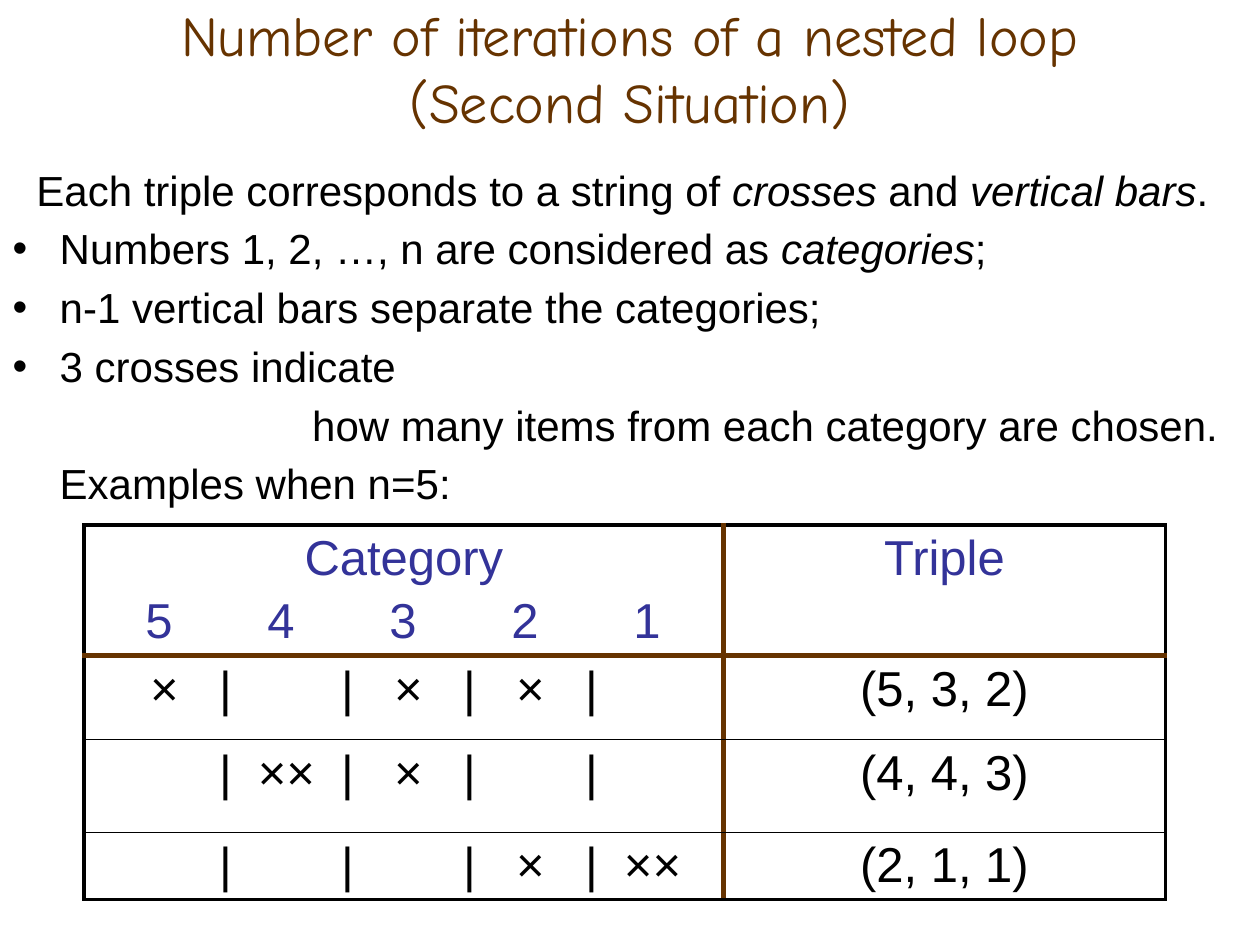
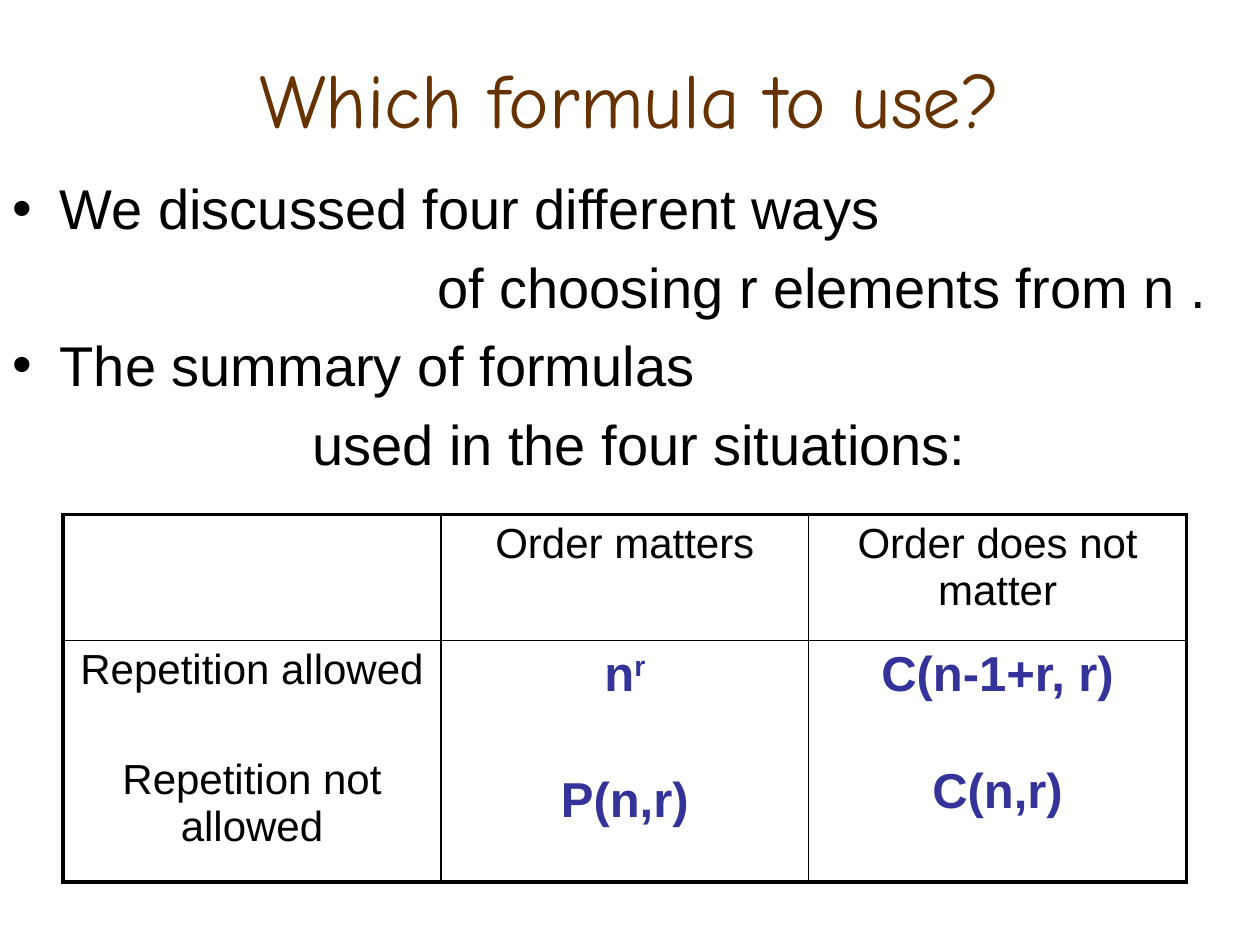
from lxml import etree
from pptx import Presentation
from pptx import util as u
from pptx.dml import color as dml
from pptx.enum import text as t
from pptx.oxml import ns

COLORS = {"brown": "663300", "ink": "000000", "indigo": "333399"}
HEADING, BODY = "Comic Neue", "Arial"
OUTER, INNER, DIVIDER = ("ink", 2.25), ("ink", 1), ("brown", 3)
HANG = 0.95


def rgb(name):
    return dml.RGBColor.from_string(COLORS[name])


def write(paragraph, words, *, size, color="ink", font=BODY, align=None,
          before=None, **style):
    """Add words, a string or a list of strings and (string, style) pairs."""
    paragraph.alignment = align
    if before is not None:
        paragraph.space_before = u.Pt(before)
    for part in [words] if isinstance(words, str) else words:
        content, own = (part, {}) if isinstance(part, str) else part
        look = {**style, **own}
        for number, line in enumerate(content.split("\n")):
            if number:
                paragraph.add_line_break()
            run = paragraph.add_run()
            run.text = line
            run.font.name, run.font.size = font, u.Pt(size)
            run.font.color.rgb = rgb(color)
            run.font.bold = look.get("bold")
            run.font.italic = look.get("italic")
            if "baseline" in look:
                run._r.get_or_add_rPr().set("baseline", str(look["baseline"]))


def add_tabs(paragraph, first, step, count):
    """Set evenly spaced centred tab stops, in centimetres."""
    tabs = etree.SubElement(paragraph._p.get_or_add_pPr(), ns.qn("a:tabLst"))
    for i in range(count):
        etree.SubElement(tabs, ns.qn("a:tab"),
                         pos=str(u.Cm(first + i * step)), algn="ctr")


def set_border(cell, side, color, width):
    line = etree.SubElement(cell._tc.get_or_add_tcPr(), ns.qn(f"a:ln{side}"),
                            w=str(u.Pt(width)))
    fill = etree.SubElement(line, ns.qn("a:solidFill"))
    etree.SubElement(fill, ns.qn("a:srgbClr"), val=COLORS[color])


class Deck:
    def __init__(self):
        self.prs = Presentation()
        self.prs.slide_width, self.prs.slide_height = u.Cm(25.4), u.Cm(19.05)
        self.slide = None

    def new_slide(self):
        self.slide = self.prs.slides.add_slide(self.prs.slide_layouts[1])

    def place(self, index, left, top, width, height):
        holder = self.slide.placeholders[index]
        holder.left, holder.top = u.Cm(left), u.Cm(top)
        holder.width, holder.height = u.Cm(width), u.Cm(height)
        holder.text_frame.auto_size = t.MSO_AUTO_SIZE.NONE
        return holder.text_frame

    def title(self, words, top, height, size):
        frame = self.place(0, 1.27, top, 22.86, height)
        frame.vertical_anchor = t.MSO_ANCHOR.MIDDLE
        write(frame.paragraphs[0], words, size=size, color="brown",
              font=HEADING, align=t.PP_ALIGN.CENTER)

    def points(self, lines, top, height, size):
        """Each line is (words, margin); a margin of None makes a bullet."""
        frame = self.place(1, 0, top, 25.4, height)
        for i, (words, margin) in enumerate(lines):
            paragraph = frame.add_paragraph() if i else frame.paragraphs[0]
            write(paragraph, words, size=size)
            props = paragraph._p.get_or_add_pPr()
            bullet = margin is None
            props.set("marL", str(u.Cm(HANG if bullet else margin)))
            props.set("indent", str(u.Cm(-HANG if bullet else 0)))
            if bullet:
                etree.SubElement(props, ns.qn("a:buChar"), char="•")
            else:
                etree.SubElement(props, ns.qn("a:buNone"))

    def table(self, left, top, widths, heights, rows, divider=INNER):
        """Each cell is a list of paragraph formats with their words."""
        table = self.slide.shapes.add_table(
            len(heights), len(widths), u.Cm(left), u.Cm(top),
            u.Cm(sum(widths)), u.Cm(sum(heights))).table
        table.first_row = table.horz_banding = False
        for column, width in zip(table.columns, widths):
            column.width = u.Cm(width)
        for row, height in zip(table.rows, heights):
            row.height = u.Cm(height)

        def rule(position, count):
            if position in (0, count):
                return OUTER
            return divider if position == 1 else INNER

        for r, row in enumerate(rows):
            for c, lines in enumerate(row):
                cell = table.cell(r, c)
                self.fill_cell(cell, lines)
                for side, border in (("L", rule(c, len(widths))),
                                     ("R", rule(c + 1, len(widths))),
                                     ("T", rule(r, len(heights))),
                                     ("B", rule(r + 1, len(heights)))):
                    set_border(cell, side, *border)
                cell.fill.background()

    def fill_cell(self, cell, lines):
        frame = cell.text_frame
        for i, line in enumerate(lines):
            paragraph = frame.add_paragraph() if i else frame.paragraphs[0]
            look = {"align": t.PP_ALIGN.CENTER, **line}
            stops = look.pop("tabs", None)
            write(paragraph, **look)
            if stops:
                add_tabs(paragraph, *stops)


def cross_row(counts, triple):
    crosses = "\t" + "\t|\t".join("×" * n for n in counts)
    return [[dict(words=crosses.rstrip("\t"), size=28, align=t.PP_ALIGN.LEFT,
                  tabs=(1.37, 1.23, 9))],
            [dict(words=triple, size=28)]]


def nested_loop_slide(deck):
    deck.new_slide()
    deck.title("Number of iterations of a nested loop\n(Second Situation)",
               0, 2.74, 32)
    slanted = {"italic": True}
    deck.points([
        (["Each triple corresponds to a string of ", ("crosses", slanted),
          " and ", ("vertical bars", slanted), "."], 0.48),
        (["Numbers 1, 2, …, n are considered as ", ("categories", slanted),
          ";"], None),
        ("n-1 vertical bars separate the categories;", None),
        ("3 crosses indicate", None),
        ("how many items from each category are chosen.", 6.04),
        ("Examples when n=5:", HANG),
    ], 3.18, 15.87, 24)
    header = dict(size=28, color="indigo")
    deck.table(1.69, 10.58, [12.9, 8.9], [2.64, 1.69, 1.87, 1.35], [
        [[dict(words="Category", **header),
          dict(words="\t5\t4\t3\t2\t1", before=5, align=t.PP_ALIGN.LEFT,
               tabs=(1.26, 2.46, 5), **header)],
         [dict(words="Triple", **header)]],
        cross_row([1, 0, 1, 1, 0], "(5, 3, 2)"),
        cross_row([0, 2, 1, 0, 0], "(4, 4, 3)"),
        cross_row([0, 0, 0, 1, 2], "(2, 1, 1)"),
    ], DIVIDER)


def formula_slide(deck):
    deck.new_slide()
    deck.title("Which formula to use?", 0.76, 2.41, 44)
    deck.points([
        ("We discussed four different ways", None),
        ("of choosing r elements from n .", 8.56),
        ("The summary of formulas", None),
        ("used in the four situations:", 6.04),
    ], 3.38, 13.64, 32)
    formula = dict(size=28, color="indigo", bold=True)
    deck.table(1.27, 10.37, [7.62, 7.41, 7.62], [2.54, 4.87], [
        [[], [dict(words="Order matters", size=24)],
         [dict(words="Order does not matter", size=24)]],
        [[dict(words="Repetition allowed", size=24),
          dict(words="Repetition not allowed", size=24, before=36)],
         [dict(words=["n", ("r", {"baseline": 30000})], **formula),
          dict(words="P(n,r)", before=41, **formula)],
         [dict(words="C(n-1+r, r)", **formula),
          dict(words="C(n,r)", before=36, **formula)]],
    ])


def main():
    deck = Deck()
    nested_loop_slide(deck)
    formula_slide(deck)
    deck.prs.save("out.pptx")


if __name__ == "__main__":
    main()
